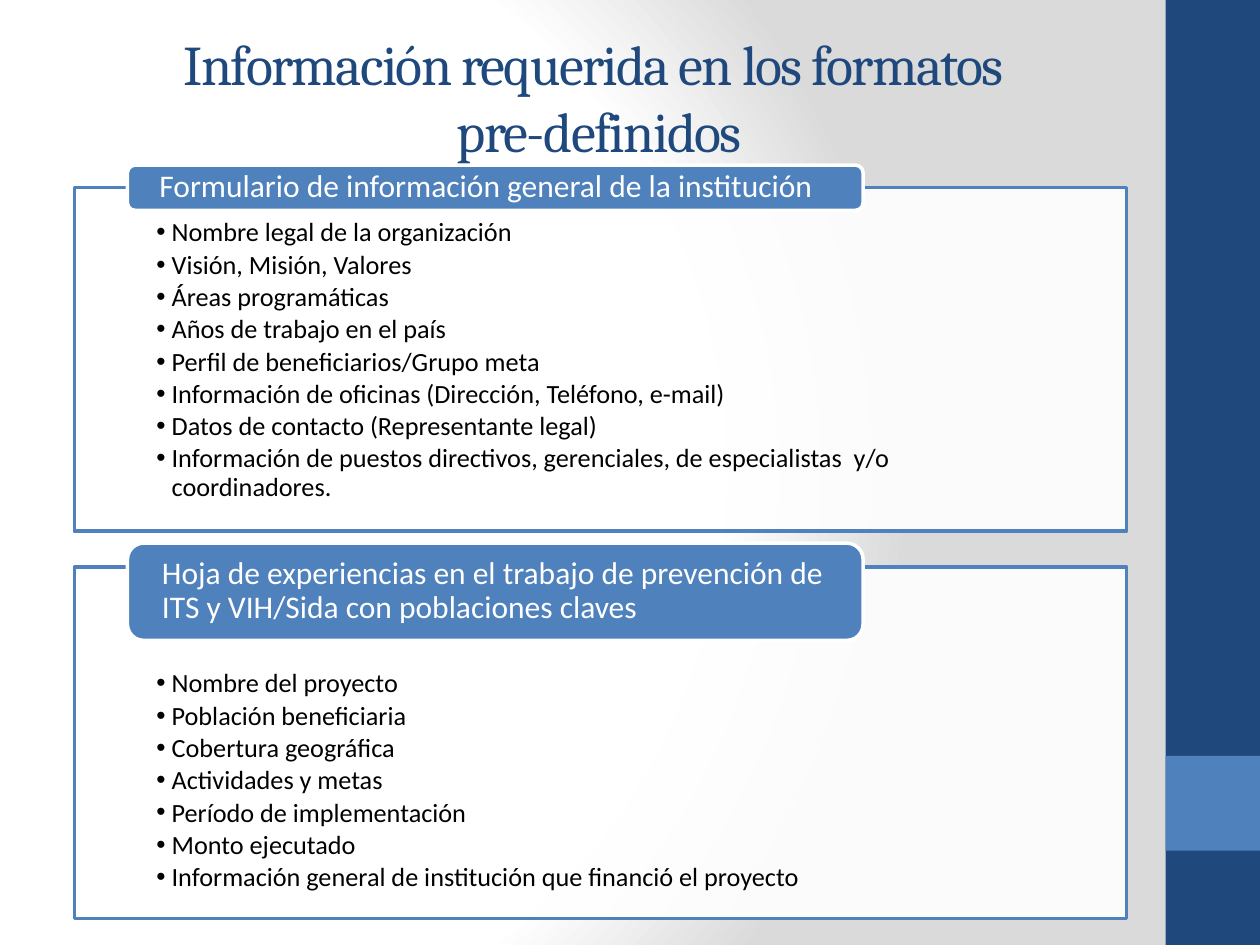
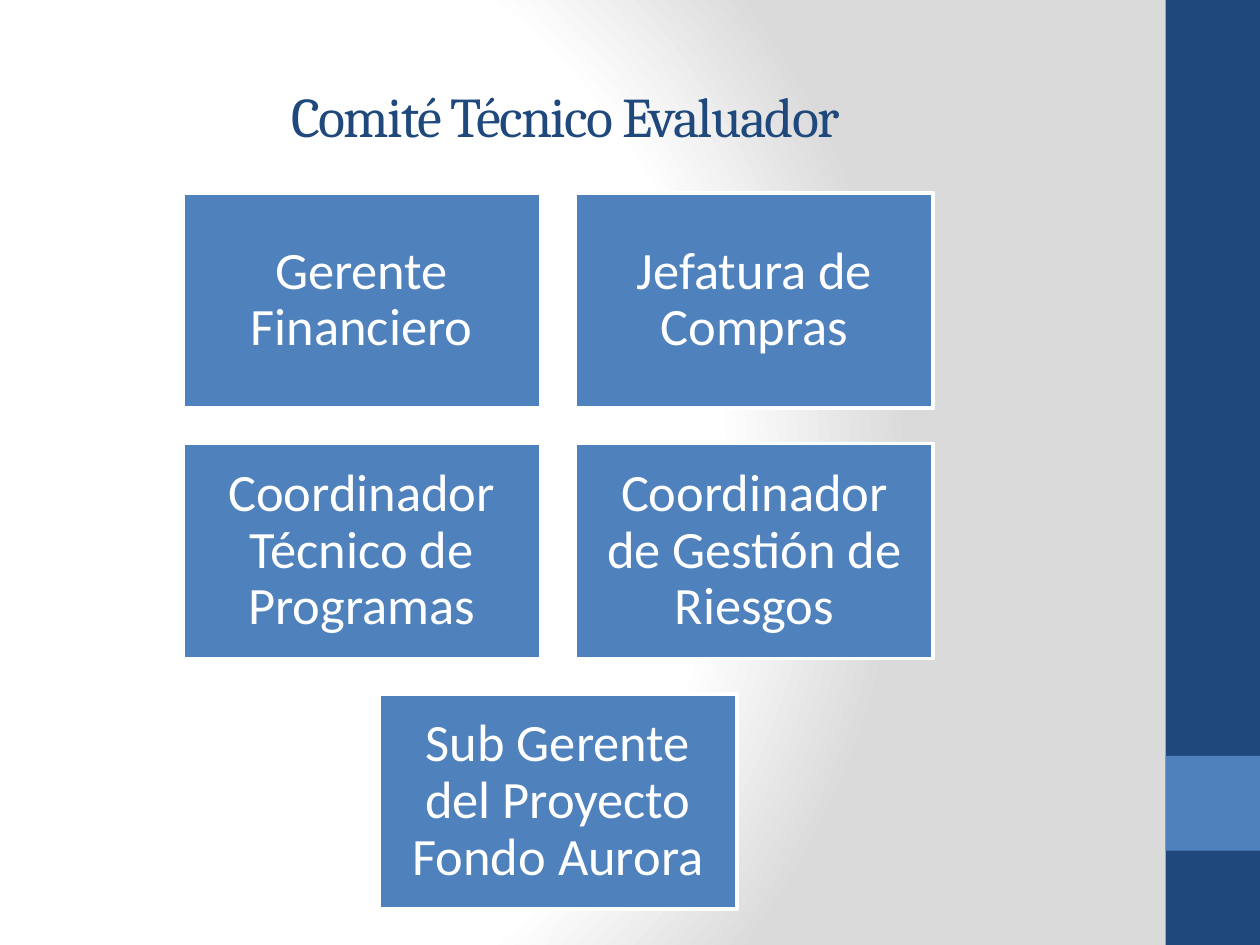
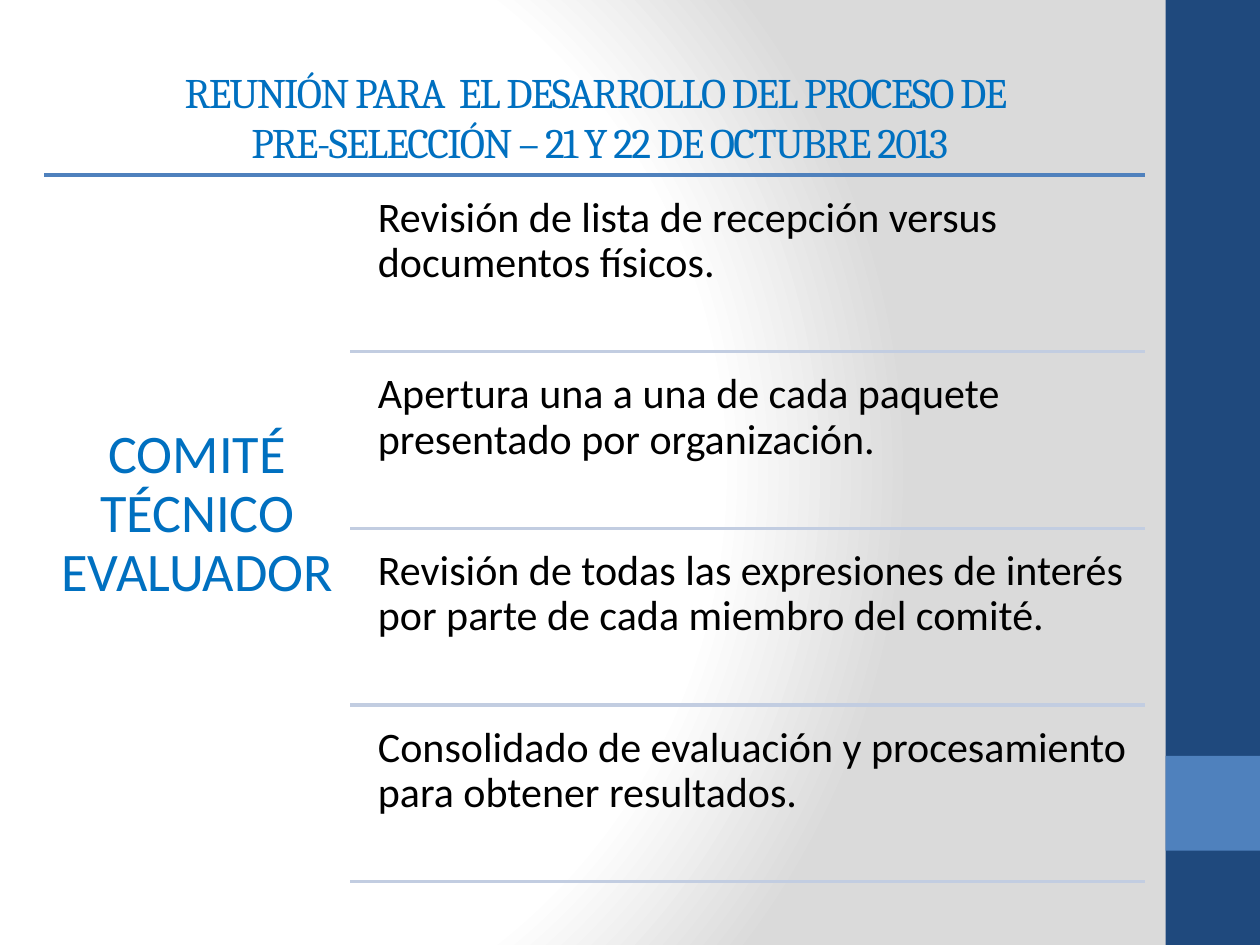
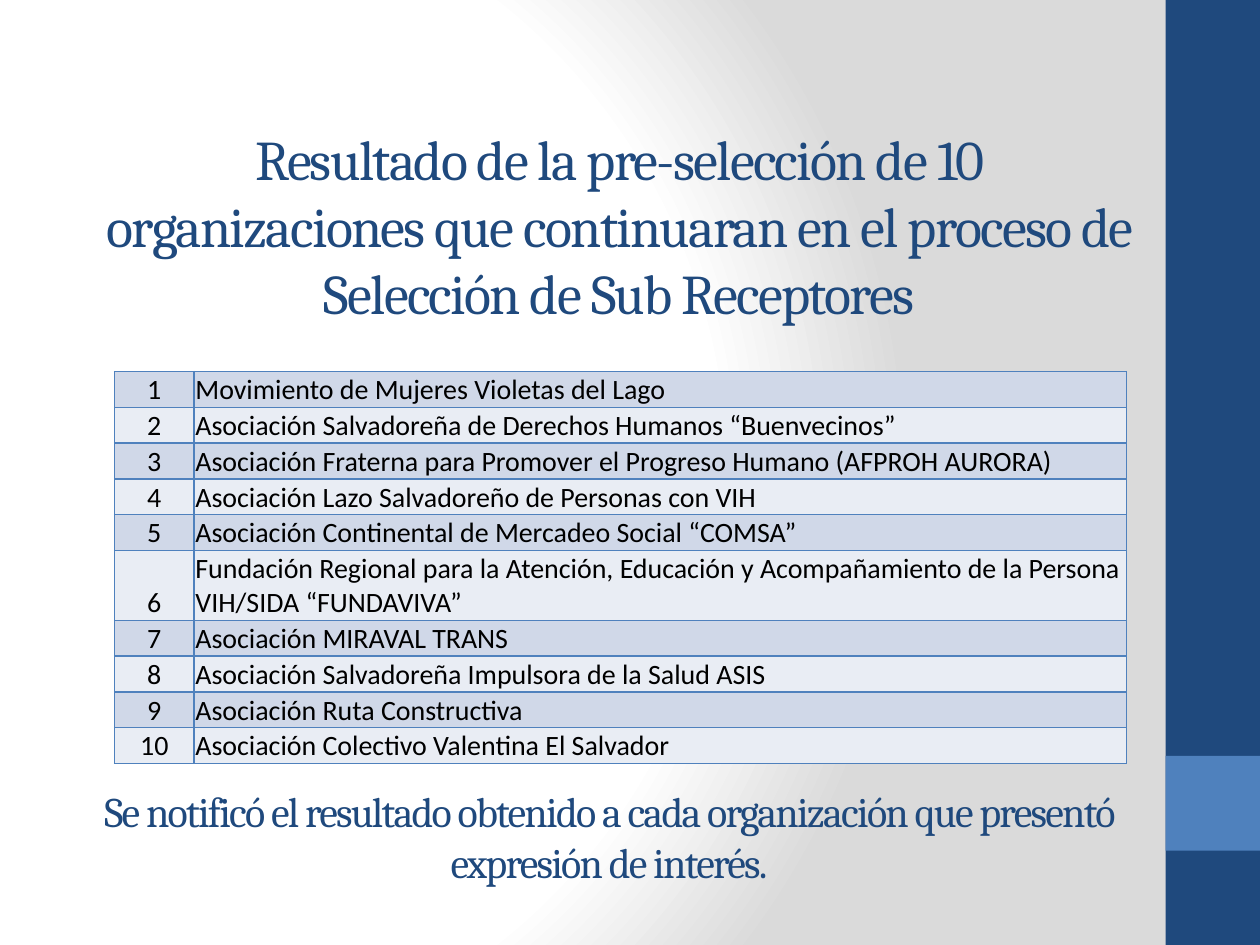
from copy import deepcopy

from pptx import Presentation
from pptx.dml.color import RGBColor
from pptx.enum.shapes import MSO_AUTO_SHAPE_TYPE as Preset, MSO_CONNECTOR as Connector
from pptx.enum.text import MSO_ANCHOR as Anchor, MSO_AUTO_SIZE as AutoSize, PP_ALIGN as Align
from pptx.oxml import parse_xml
from pptx.oxml.ns import nsdecls, qn
from pptx.util import Cm, Pt

NAVY, BLUE, BRIGHT, PALE = "1F497D", "4F81BD", "0070C0", "C2CDE1"
WHITE, GREY, BLACK = "FFFFFF", "DADADA", "000000"
ROW_FILLS = "D0D8E8", "E9EDF4"
TWO_CONTENT, TITLE_ONLY = 3, 5


def rgb(colour):
    """Turn a hex string into a colour."""
    return RGBColor.from_string(colour)


class Deck:
    """Holds the shared style and the current slide."""

    heading, body = "Cambria", "Calibri"

    def __init__(self):
        """Open a 4:3 presentation and dress its master."""
        self.prs = Presentation()
        self.prs.slide_width, self.prs.slide_height = Cm(25.4), Cm(19.05)
        self.slide = None
        self.background()

    def background(self):
        """Give the master its round gradient."""
        stops = "".join(
            f'<a:gs pos="{place}"><a:srgbClr val="{colour}"/></a:gs>'
            for place, colour in ((0, WHITE), (75000, WHITE), (100000, GREY)))
        sheet = self.prs.slide_master.element.cSld
        sheet.remove(sheet.find(qn("p:bg")))
        sheet.insert(0, parse_xml(
            f'<p:bg {nsdecls("p", "a")}><p:bgPr><a:gradFill rotWithShape="1">'
            f'<a:gsLst>{stops}</a:gsLst><a:path path="circle">'
            '<a:fillToRect l="20000" t="50000" r="100000" b="50000"/></a:path>'
            '</a:gradFill><a:effectLst/></p:bgPr></p:bg>'))

    def side_band(self):
        """Draw the right band and move it to the master."""
        master_tree = self.prs.slide_master.shapes.element
        bands = ((0, 19.05, NAVY), (15.24, 1.91, BLUE))
        for order, (top, height, colour) in enumerate(bands):
            band = self.box((23.5, top, 1.9, height), colour)
            band.element.nvSpPr.cNvPr.set("id", str(20 + order))
            master_tree.insert(2 + order, band.element)

    def new_slide(self, layout, title, area, size=32, colour=NAVY):
        """Start a slide and set its title."""
        self.slide = self.prs.slides.add_slide(self.prs.slide_layouts[layout])
        if len(self.prs.slides) == 1:
            self.side_band()
        self.place(self.slide.shapes.title, area)
        self.headline(self.slide.shapes.title, title, size, colour)

    def place(self, shape, area):
        """Move a shape to an area in centimetres."""
        shape.left, shape.top, shape.width, shape.height = map(Cm, area)

    def paint(self, shape, fill, line=None):
        """Set fill and outline and drop the shadow."""
        shape.shadow.inherit = False
        shape.fill.solid()
        shape.fill.fore_color.rgb = rgb(fill)
        if line:
            shape.line.color.rgb = rgb(line)
            shape.line.width = Pt(2)
        else:
            shape.line.fill.background()

    def put_text(self, frame, text, size, colour, font=body, align=Align.LEFT,
                 anchor=Anchor.MIDDLE, insets=(0.25, 0.13, 0.25, 0.13), spacing=0.9):
        """Fill a text frame and format all its runs."""
        frame.text = text
        frame.word_wrap = True
        frame.auto_size = AutoSize.NONE
        frame.vertical_anchor = anchor
        (frame.margin_left, frame.margin_top,
         frame.margin_right, frame.margin_bottom) = map(Cm, insets)
        for paragraph in frame.paragraphs:
            self.style(paragraph, size, colour, font, align)
            paragraph.line_spacing = spacing

    def style(self, paragraph, size, colour, font, align):
        """Format one paragraph and its runs."""
        paragraph.alignment = align
        for run in paragraph.runs:
            run.font.size, run.font.name, run.font.bold = Pt(size), font, False
            run.font.color.rgb = rgb(colour)

    def headline(self, shape, text, size, colour=NAVY):
        """Set centred heading text with tight letters."""
        self.put_text(shape.text_frame, text, size, colour, self.heading, Align.CENTER,
                      spacing=1.0)
        for paragraph in shape.text_frame.paragraphs:
            for run in paragraph.runs:
                run.font._element.set("spc", "-100")
            for line_break in paragraph._p.findall(qn("a:br")):
                line_break.insert(0, deepcopy(paragraph.runs[0].font._element))

    def box(self, area, fill, line=None, preset=Preset.RECTANGLE):
        """Add a filled preset shape."""
        shape = self.slide.shapes.add_shape(preset, *map(Cm, area))
        self.paint(shape, fill, line)
        return shape

    def text(self, area):
        """Add an empty text box."""
        return self.slide.shapes.add_textbox(*map(Cm, area))

    def bullets(self, index, area, items, top_inset):
        """Turn a body placeholder into a framed list."""
        panel = self.slide.placeholders[index]
        self.place(panel, area)
        self.paint(panel, WHITE, BLUE)
        panel.element.spPr.find(f".//{qn('a:srgbClr')}").append(
            parse_xml(f'<a:alpha {nsdecls("a")} val="90000"/>'))
        self.put_text(panel.text_frame, "\n".join(items), 15, BLACK,
                      anchor=Anchor.TOP, insets=(1.65, top_inset, 1.65, 0.3))
        for paragraph in panel.text_frame.paragraphs:
            paragraph.space_before, paragraph.space_after = Pt(0), Pt(2.25)
            properties = paragraph._p.get_or_add_pPr()
            properties.set("marL", str(Cm(0.31)))
            properties.set("indent", str(Cm(-0.31)))
            properties.append(parse_xml(f'<a:buChar {nsdecls("a")} char="•"/>'))

    def rule(self, left, right, top, colour):
        """Draw a horizontal line."""
        line = self.slide.shapes.add_connector(
            Connector.STRAIGHT, Cm(left), Cm(top), Cm(right), Cm(top))
        line.line.color.rgb = rgb(colour)
        line.line.width = Pt(2)
        line.element.spPr.append(parse_xml(f'<a:effectLst {nsdecls("a")}/>'))

    def numbered_table(self, area, widths, names):
        """Add a two-column table that numbers the names."""
        table = self.slide.shapes.add_table(len(names), 2, *map(Cm, area)).table
        table.first_row = False
        for column, width in zip(table.columns, widths):
            column.width = Cm(width)
        for order, name in enumerate(names):
            for cell, value, align in zip(table.rows[order].cells, (str(order + 1), name),
                                          (Align.CENTER, Align.LEFT)):
                self.cell(cell, value, align, ROW_FILLS[order % 2])

    def cell(self, cell, value, align, fill):
        """Fill in one table cell with its colour and borders."""
        cell.text_frame.text = value
        self.style(cell.text_frame.paragraphs[0], 16, BLACK, self.body, align)
        cell.vertical_anchor = Anchor.BOTTOM
        cell.margin_left = cell.margin_top = cell.margin_right = Cm(0.03)
        cell.margin_bottom = 0
        cell.fill.solid()
        cell.fill.fore_color.rgb = rgb(fill)
        for order, side in enumerate("LRTB"):
            cell._tc.get_or_add_tcPr().insert(order, parse_xml(
                f'<a:ln{side} {nsdecls("a")} w="12700"><a:solidFill>'
                f'<a:srgbClr val="{BLUE}"/></a:solidFill></a:ln{side}>'))


def required_forms(deck):
    """Build the slide on the predefined forms."""
    deck.new_slide(TWO_CONTENT, "Información requerida en los formatos \vpre-definidos",
                   (1.5, 0.05, 21.16, 3.78))
    forms = (
        ("Formulario de información general de la institución",
         (3.33, 0.91), (3.78, 6.93), 0.64,
         ("Nombre legal de la organización", "Visión, Misión, Valores",
          "Áreas programáticas", "Años de trabajo en el país",
          "Perfil de beneficiarios/Grupo meta",
          "Información de oficinas (Dirección, Teléfono, e-mail)",
          "Datos de contacto (Representante legal)",
          "Información de puestos directivos, gerenciales, de especialistas  y/o coordinadores.")),
        ("Hoja de experiencias en el trabajo de prevención de ITS y VIH/Sida "
         "con poblaciones claves",
         (10.95, 1.96), (11.43, 7.09), 2.08,
         ("Nombre del proyecto", "Población beneficiaria", "Cobertura geográfica",
          "Actividades y metas", "Período de implementación", "Monto ejecutado",
          "Información general de institución que financió el proyecto")),
    )
    for index, (form, (tab_top, tab_height), (top, height), inset, fields) in enumerate(forms, 1):
        deck.bullets(index, (1.5, top, 21.21, height), fields, inset)
        tab = deck.box((2.57, tab_top, 14.83, tab_height), BLUE, WHITE, Preset.ROUNDED_RECTANGLE)
        deck.put_text(tab.text_frame, form, 18, WHITE, insets=(0.6, 0, 0.6, 0))


def committee(deck):
    """Build the slide on the committee members."""
    deck.new_slide(TITLE_ONLY, "Comité Técnico Evaluador ", (2.31, 0.74, 18.39, 3.18))
    rows = (("Gerente Financiero", "Jefatura de Compras"),
            ("Coordinador Técnico de Programas", "Coordinador de Gestión de Riesgos"),
            ("Sub Gerente del Proyecto Fondo Aurora",))
    width, height, gap, centre, top = 7.21, 4.34, 0.71, 11.25, 3.89
    for row, members in enumerate(rows):
        left = centre - (len(members) * (width + gap) - gap) / 2
        for column, member in enumerate(members):
            card = deck.box((left + column * (width + gap), top + row * (height + gap),
                             width, height), BLUE, WHITE)
            deck.put_text(card.text_frame, member, 30, WHITE, align=Align.CENTER,
                          insets=(0.3, 0.3, 0.3, 0.3))


def meeting(deck):
    """Build the slide on the pre-selection meeting."""
    deck.new_slide(TITLE_ONLY, "REUNIÓN PARA  EL DESARROLLO DEL PROCESO DE \v"
                   "PRE-SELECCIÓN – 21 Y 22 DE OCTUBRE 2013",
                   (0.66, 0.76, 22.86, 3.18), 24, BRIGHT)
    left, right, top, pitch = 0.89, 23.09, 3.53, 3.56
    deck.rule(left, right, top, BLUE)
    evaluator = deck.text((left, top, 6.17, 14.45))
    deck.put_text(evaluator.text_frame, "COMITÉ TÉCNICO EVALUADOR", 31, BRIGHT,
                  align=Align.CENTER, anchor=Anchor.TOP, insets=(0.25, 5.08, 0.25, 0.33))
    steps = ("Revisión de lista de recepción versus documentos físicos.",
             "Apertura una a una de cada paquete presentado por organización.",
             "Revisión de todas las expresiones de interés por parte de cada miembro del comité.",
             "Consolidado de evaluación y procesamiento para obtener resultados.")
    for order, step in enumerate(steps):
        step_top = top + order * pitch
        action = deck.text((7.37, step_top + 0.17, 15.7, 3.4))
        deck.put_text(action.text_frame, step, 24, BLACK, anchor=Anchor.TOP,
                      insets=(0.25, 0.25, 0.25, 0.25))
        deck.rule(7.06, right, step_top + pitch, PALE)


def results(deck):
    """Build the slide on the chosen organisations."""
    deck.new_slide(TITLE_ONLY, "Resultado de la pre-selección de 10 organizaciones que "
                   "continuaran en el proceso de Selección de Sub Receptores",
                   (1.9, 2.34, 21.16, 4.39))
    deck.numbered_table((2.31, 7.49, 20.4, 5.6), (1.6, 18.8), (
        "Movimiento de Mujeres Violetas del Lago",
        "Asociación Salvadoreña de Derechos Humanos “Buenvecinos”",
        "Asociación Fraterna para Promover el Progreso Humano (AFPROH AURORA)",
        "Asociación Lazo Salvadoreño de Personas con VIH",
        "Asociación Continental de Mercadeo Social “COMSA”",
        "Fundación Regional para la Atención, Educación y Acompañamiento de la "
        "Persona VIH/SIDA “FUNDAVIVA”",
        "Asociación MIRAVAL TRANS",
        "Asociación Salvadoreña Impulsora de la Salud ASIS",
        "Asociación Ruta Constructiva",
        "Asociación Colectivo Valentina El Salvador"))
    notice = deck.text((1.7, 14.66, 21.16, 4.39))
    deck.headline(notice, "Se notificó el resultado obtenido a cada organización que presentó "
                  "expresión de interés.", 24)


def main():
    """Build the slides and save them."""
    deck = Deck()
    for build in (required_forms, committee, meeting, results):
        build(deck)
    deck.prs.save("out.pptx")


if __name__ == "__main__":
    main()
